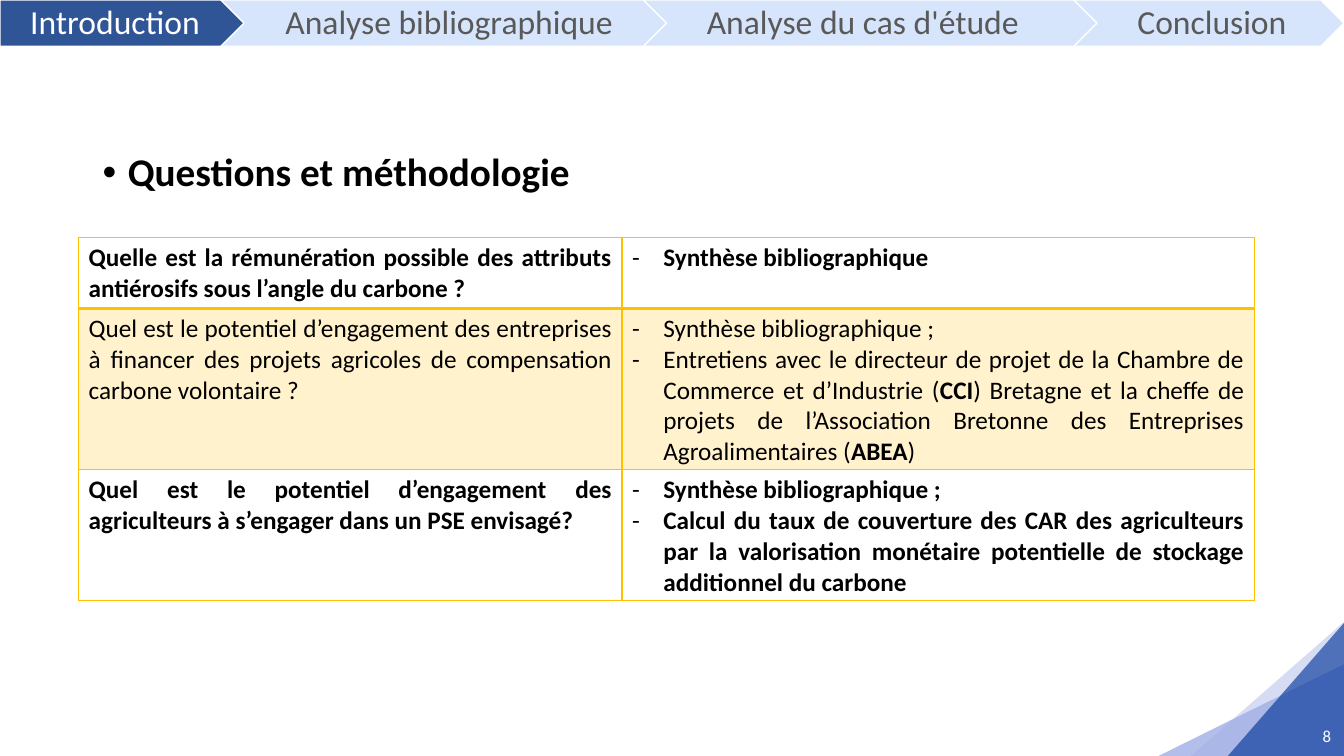
from lxml import etree
from pptx import Presentation
from pptx.dml.color import RGBColor
from pptx.enum import shapes, text
from pptx.oxml import ns
from pptx.util import Inches, Pt

FONT = "Calibri"
BLACK, WHITE, GREY, GOLD = "000000", "FFFFFF", "595959", "FFC000"
NAVY, PALE_BLUE, PALE_GOLD = "2F5597", "D6E5FB", "FFF2CC"
PREFIX = "{%s}" % ns.nsdecls("a").split('"')[1]

# label, left, width, text left, text width, centred
STEPS = [
    ("Introduction", 0, 3.23, 0.3, 2.8, False),
    ("Analyse bibliographique", 2.19, 5.29, 2.83, 4.38, False),
    ("Analyse du cas d'étude", 6.38, 5.29, 7.01, 4.38, False),
    ("Conclusion", 10.65, 2.68, 10.98, 2.08, True),
]
BANNER_HEIGHT = 0.46

# left, top, width, height, colour, opacity in percent
CORNER = [
    (11.89, 6.07, 1.35, 1.54, "C5CEEF", 71),
    (11.94, 6.12, 0.92, 1.86, "9FAEE5", 79),
    (12.08, 6.26, 1.34, 1.17, "003399", 63),
]

# question, methods (each a list of text and bold runs), bold row, fill, height
ROWS = [
    ("Quelle est la rémunération possible des attributs antiérosifs sous l’angle du carbone ?",
     [[("Synthèse bibliographique", True)]], True, None, 0.7),
    ("Quel est le potentiel d’engagement des entreprises à financer des projets agricoles "
     "de compensation carbone volontaire ?",
     [[("Synthèse bibliographique ;", False)],
      [("Entretiens avec le directeur de projet de la Chambre de Commerce et d’Industrie (", False),
       ("CCI", True),
       (") Bretagne et la cheffe de projets de l’Association Bretonne des Entreprises "
        "Agroalimentaires (", False),
       ("ABEA", True), (")", False)]], False, PALE_GOLD, 1.6),
    ("Quel est le potentiel d’engagement des agriculteurs à s’engager dans un PSE envisagé?",
     [[("Synthèse bibliographique ;", True)],
      [("Calcul du taux de couverture des CAR des agriculteurs par la valorisation monétaire "
        "potentielle de stockage additionnel du carbone", True)]], True, None, 1.3),
]
COLUMN_WIDTHS = [5.39, 6.27]


def colour(value):
    return RGBColor.from_string(value)


def add_xml(parent, tag, **attributes):
    return etree.SubElement(parent, PREFIX + tag, attributes)


def write(frame, paragraphs, size, color=BLACK, align=None, bullet=None, indent=0, spacing=None):
    """Fill a text frame; each paragraph is a list of (text, bold) runs."""
    for index, runs in enumerate(paragraphs):
        paragraph = frame.paragraphs[0] if index == 0 else frame.add_paragraph()
        paragraph.alignment = align
        if spacing:
            paragraph.line_spacing = spacing
        if bullet:
            properties = paragraph._p.get_or_add_pPr()
            properties.set("marL", str(Inches(indent)))
            properties.set("indent", str(-Inches(indent)))
            add_xml(properties, "buFont", typeface="Arial" if bullet == "•" else FONT)
            add_xml(properties, "buChar", char=bullet)
        for words, bold in runs:
            run = paragraph.add_run()
            run.text = words
            run.font.name, run.font.size, run.font.bold = FONT, Pt(size), bold
            run.font.color.rgb = colour(color)


def add_label(slide, box, paragraphs, size, margins=(0.1, 0.05), wrap=True, **style):
    frame = slide.shapes.add_textbox(*map(Inches, box)).text_frame
    frame.word_wrap = wrap
    frame.vertical_anchor = text.MSO_ANCHOR.MIDDLE
    frame.margin_left = frame.margin_right = Inches(margins[0])
    frame.margin_top = frame.margin_bottom = Inches(margins[1])
    write(frame, paragraphs, size, **style)


def add_block(slide, kind, box, fill, line=None):
    shape = slide.shapes.add_shape(kind, *map(Inches, box))
    shape.shadow.inherit = False
    shape.fill.solid()
    shape.fill.fore_color.rgb = colour(fill)
    if line:
        shape.line.color.rgb = colour(line)
        shape.line.width = Pt(1)
    else:
        shape.line.fill.background()
    return shape


def add_corner(slide):
    for left, top, width, height, fill, opacity in CORNER:
        triangle = add_block(slide, shapes.MSO_SHAPE.ISOSCELES_TRIANGLE,
                             (left, top, width, height), fill)
        triangle.adjustments[0] = 0
        triangle.rotation = 270
        tint = triangle._element.spPr.find(ns.qn("a:solidFill"))[0]
        add_xml(tint, "alpha", val=str(opacity * 1000))


def add_banner(slide):
    for index, (label, left, width, text_left, text_width, centred) in enumerate(STEPS):
        current = index == 0
        kind = shapes.MSO_SHAPE.PENTAGON if current else shapes.MSO_SHAPE.CHEVRON
        add_block(slide, kind, (left, 0, width, BANNER_HEIGHT),
                  NAVY if current else PALE_BLUE, WHITE)
        add_label(slide, (text_left, 0, text_width, BANNER_HEIGHT), [[(label, False)]], 24,
                  margins=(0, 0), color=WHITE if current else GREY, spacing=0.9,
                  align=text.PP_ALIGN.CENTER if centred else text.PP_ALIGN.LEFT)


def set_borders(cell, **widths):
    properties = cell._tc.get_or_add_tcPr()
    for side in ("L", "R", "T", "B"):
        line = add_xml(properties, "ln" + side, w=str(Pt(widths.get(side, 1))))
        add_xml(add_xml(line, "solidFill"), "srgbClr", val=GOLD)


def add_questions(slide):
    heights = [row[-1] for row in ROWS]
    box = (0.78, 2.36, sum(COLUMN_WIDTHS), sum(heights))
    table = slide.shapes.add_table(len(ROWS), len(COLUMN_WIDTHS), *map(Inches, box)).table
    table.first_row = table.horz_banding = False
    for column, width in zip(table.columns, COLUMN_WIDTHS):
        column.width = Inches(width)
    for index, (question, methods, bold, fill, height) in enumerate(ROWS):
        table.rows[index].height = Inches(height)
        left, right = table.rows[index].cells
        write(left.text_frame, [[(question, bold)]], 18, align=text.PP_ALIGN.JUSTIFY)
        write(right.text_frame, methods, 18, align=text.PP_ALIGN.JUSTIFY, bullet="-", indent=0.31)
        for cell in (left, right):
            set_borders(cell, T=2 if index == 1 else 1, B=2 if index == 0 else 1)
            if fill:
                cell.fill.solid()
                cell.fill.fore_color.rgb = colour(fill)
            else:
                cell.fill.background()


def main():
    presentation = Presentation()
    presentation.slide_width, presentation.slide_height = Inches(13.33), Inches(7.5)
    slide = presentation.slides.add_slide(presentation.slide_layouts[6])
    add_corner(slide)
    add_label(slide, (10.3, 7.1, 3, 0.4), [[("8", False)]], 12, color=WHITE,
              align=text.PP_ALIGN.RIGHT)
    add_label(slide, (0.92, 1.46, 4.89, 0.53), [[("Questions et méthodologie", True)]], 28,
              wrap=False, align=text.PP_ALIGN.LEFT, bullet="•", indent=0.25, spacing=0.9)
    add_questions(slide)
    add_banner(slide)
    presentation.save("out.pptx")


if __name__ == "__main__":
    main()
